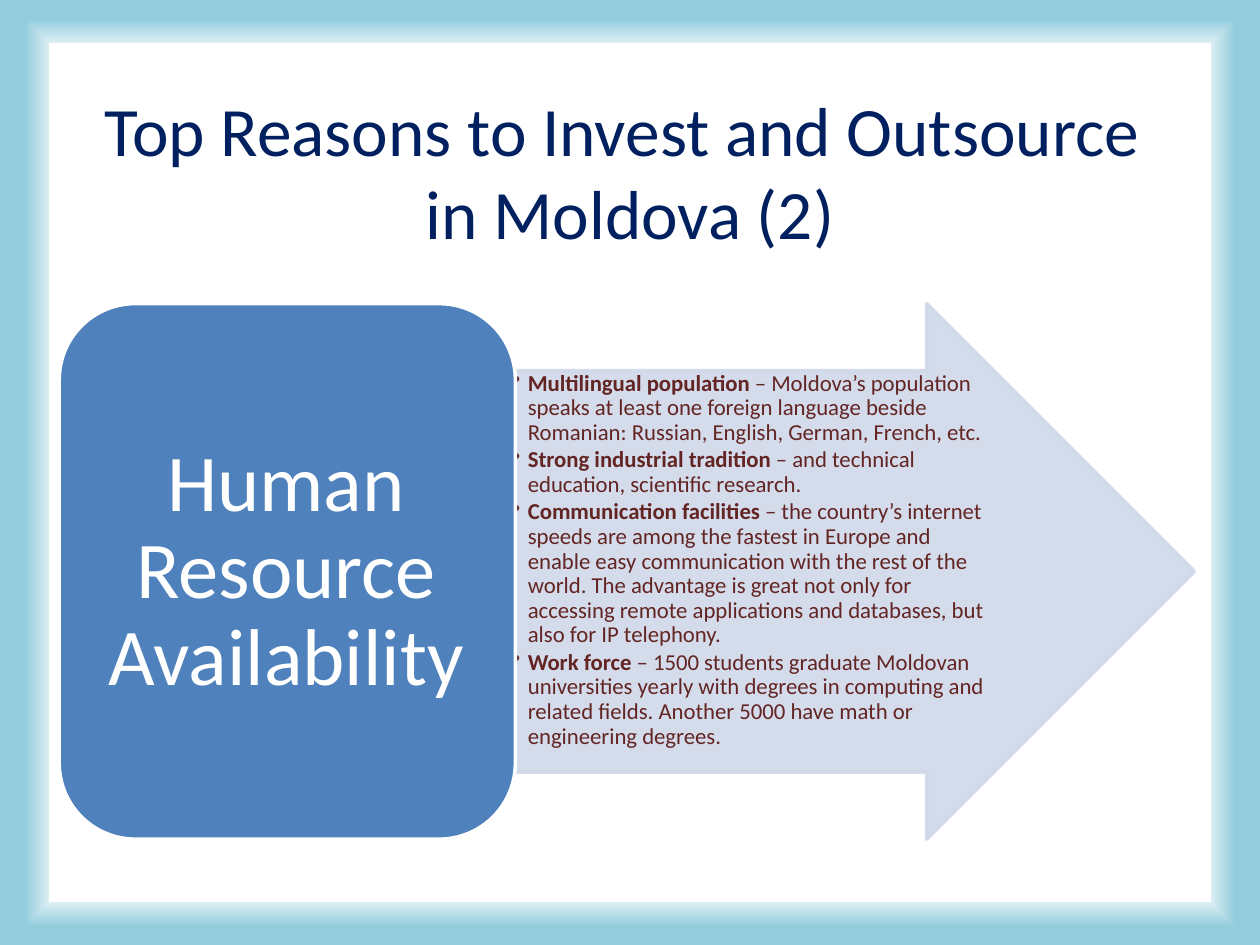
from lxml.etree import SubElement as Sub
from pptx import Presentation as Deck
from pptx.dml.color import RGBColor as Color
from pptx.enum.shapes import MSO_SHAPE as Kind
from pptx.enum.text import MSO_ANCHOR as Anchor, PP_ALIGN as Align
from pptx.oxml import parse_xml as to_xml
from pptx.oxml.ns import nsdecls, qn
from pptx.util import Inches, Pt

STOPS = [(0, "FFFFFF"), (91, "FFFFFF"), (91, "DBEEF4"), (96, "93CDDD"), (100, "93CDDD")]
REASONS = [
    ("Multilingual population",
     " – Moldova’s population speaks at least one foreign language beside "
     "Romanian: Russian, English, German, French, etc."),
    ("Strong industrial tradition",
     " – and technical education, scientific research."),
    ("Communication facilities",
     " – the country’s internet speeds are among the fastest in Europe and "
     "enable easy communication with the rest of the world. The advantage is "
     "great not only for accessing remote applications and databases, but "
     "also for IP telephony."),
    ("Work force",
     " – 1500 students graduate Moldovan universities yearly with degrees in "
     "computing and related fields. Another 5000 have math or engineering degrees."),
]


def paint(fill, tone, alpha=None):
    """Give a fill a solid colour and an optional opacity in percent."""
    fill.solid()
    fill.fore_color.rgb = Color.from_string(tone)
    if alpha:
        node = fill._xPr.find(".//" + qn("a:srgbClr"))
        Sub(node, qn("a:alpha"), val=str(alpha * 1000))


def set_all(item, style):
    """Set each attribute named in the style."""
    for name, value in style.items():
        setattr(item, name, value)


def add_back(slide):
    """Fill the background with the glowing frame gradient."""
    stops = "".join(f'<a:gs pos="{pos * 1000}"><a:srgbClr val="{tone}"/></a:gs>'
                    for pos, tone in STOPS)
    slide._element.cSld.insert(0, to_xml(
        f'<p:bg {nsdecls("p", "a")}><p:bgPr><a:gradFill><a:gsLst>{stops}</a:gsLst>'
        '<a:path path="shape"><a:fillToRect l="50000" t="50000" r="50000" b="50000"/>'
        '</a:path></a:gradFill><a:effectLst/></p:bgPr></p:bg>'))


def add_block(slide, kind, box, tone, edge, alpha=None, adjust=()):
    """Draw a filled preset shape with a two-point outline."""
    block = slide.shapes.add_shape(kind, *map(Inches, box))
    block.shadow.inherit = False
    paint(block.fill, tone, alpha)
    paint(block.line.fill, edge, alpha)
    block.line.width = Pt(2)
    for i, value in enumerate(adjust):
        block.adjustments[i] = value


def add_text(slide, box, pad, anchor):
    """Add a wrapping text box and return its frame."""
    frame = slide.shapes.add_textbox(*map(Inches, box)).text_frame
    side, edge = map(Inches, pad)
    set_all(frame, {"word_wrap": True, "vertical_anchor": anchor,
                    "margin_left": side, "margin_right": side,
                    "margin_top": edge, "margin_bottom": edge})
    return frame


def add_run(para, text, size, tone, bold=False):
    """Append a run, turning line breaks into real ones."""
    for i, line in enumerate(text.split("\n")):
        if i:
            para.add_line_break()
        run = para.add_run()
        run.text = line
        set_all(run.font, {"name": "Calibri", "size": Pt(size), "bold": bold})
        run.font.color.rgb = Color.from_string(tone)


def add_label(slide, box, text, size, tone, pad=(0.1, 0.05), gap=1.0):
    """Add a centred label."""
    para = add_text(slide, box, pad, Anchor.MIDDLE).paragraphs[0]
    set_all(para, {"alignment": Align.CENTER, "line_spacing": gap})
    add_run(para, text, size, tone)


def add_list(slide, box, items):
    """Add a bulleted list with bold leads."""
    frame = add_text(slide, box, (0.01, 0.01), Anchor.TOP)
    for i, (lead, rest) in enumerate(items):
        para = frame.add_paragraph() if i else frame.paragraphs[0]
        set_all(para, {"level": 1, "line_spacing": 0.9, "space_after": Pt(1.6),
                       "alignment": Align.LEFT})
        props = para._p.get_or_add_pPr()
        props.set("marL", str(Inches(0.12)))
        props.set("indent", str(Inches(-0.12)))
        Sub(props, qn("a:buChar"), char="•")
        add_run(para, lead, 13, "632523", True)
        add_run(para, rest, 13, "632523")


def main():
    """Build the slide and save it."""
    deck = Deck()
    set_all(deck, {"slide_width": Inches(10), "slide_height": Inches(7.5)})
    slide = deck.slides.add_slide(deck.slide_layouts[6])
    add_back(slide)
    add_label(slide, (0.69, 0.68, 8.62, 1.34),
              "Top Reasons to Invest and Outsource \nin Moldova (2)", 39.6, "002060")
    add_block(slide, Kind.RIGHT_ARROW, (4.06, 2.41, 5.42, 4.25),
              "D0D8E8", "D0D8E8", 90, (0.75, 0.5))
    add_list(slide, (4.06, 2.94, 3.83, 3.19), REASONS)
    add_block(slide, Kind.ROUNDED_RECTANGLE, (0.47, 2.41, 3.62, 4.25), "4F81BD", "FFFFFF")
    add_label(slide, (0.64, 2.59, 3.26, 3.9), "Human Resource Availability",
              46, "FFFFFF", (0.19, 0.1), 0.9)
    deck.save("out.pptx")


if __name__ == "__main__":
    main()
